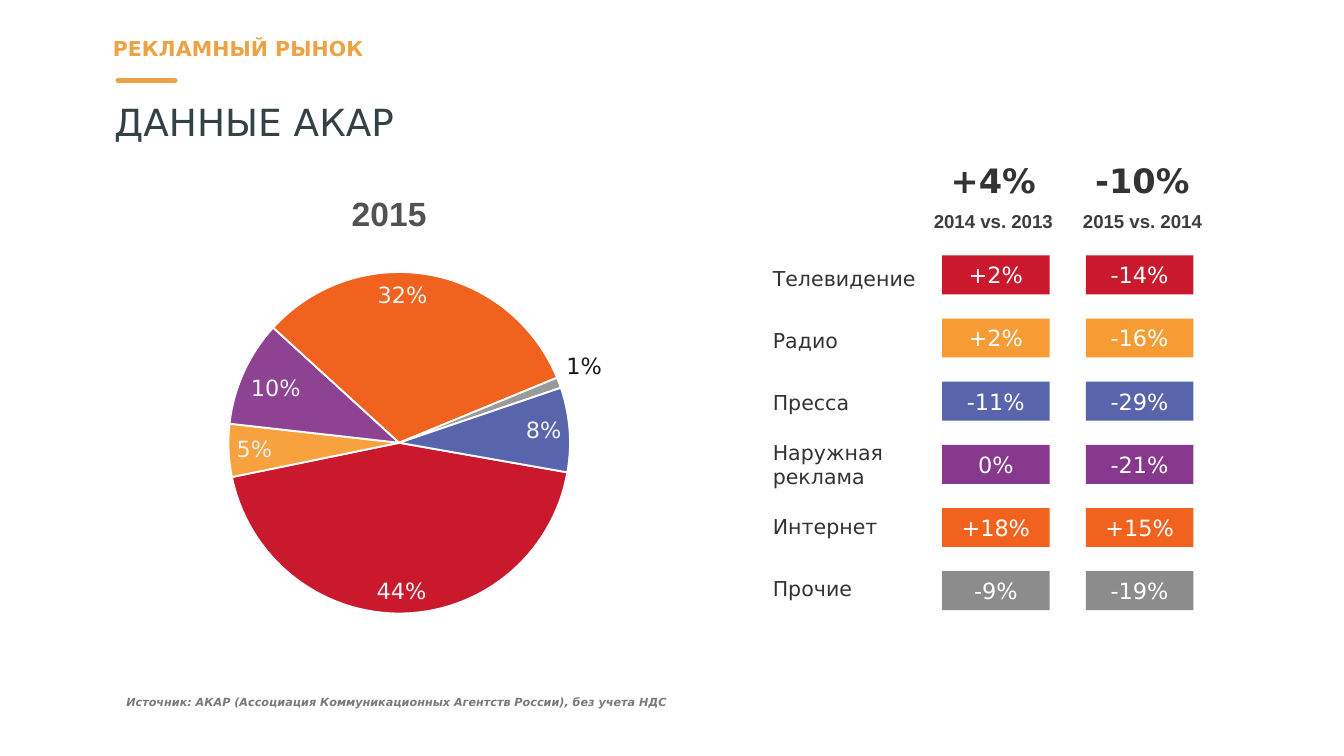
from typing import NamedTuple

from lxml import etree
from pptx import Presentation
from pptx.chart.data import CategoryChartData
from pptx.dml.color import RGBColor
from pptx.enum.chart import XL_CHART_TYPE, XL_LABEL_POSITION
from pptx.enum.shapes import MSO_CONNECTOR, MSO_SHAPE
from pptx.enum.text import MSO_ANCHOR, MSO_AUTO_SIZE, PP_ALIGN
from pptx.oxml.ns import qn
from pptx.util import Inches, Pt

LEFT, CENTER = PP_ALIGN.LEFT, PP_ALIGN.CENTER
TOP, MIDDLE, BOTTOM = MSO_ANCHOR.TOP, MSO_ANCHOR.MIDDLE, MSO_ANCHOR.BOTTOM
NO_FIT = MSO_AUTO_SIZE.NONE
IN_END, OUT_END = XL_LABEL_POSITION.INSIDE_END, XL_LABEL_POSITION.OUTSIDE_END
PIE, RECT, STRAIGHT = XL_CHART_TYPE.PIE, MSO_SHAPE.RECTANGLE, MSO_CONNECTOR.STRAIGHT

SANS, ARIAL = "DejaVu Sans", "Arial"
WHITE = RGBColor(0xFF, 0xFF, 0xFF)
PALE = RGBColor(0xF2, 0xF2, 0xF2)
GOLD = RGBColor(0xEC, 0xA2, 0x45)
SLATE = RGBColor(0x35, 0x42, 0x45)
BLACK = RGBColor(0x1A, 0x1A, 0x1A)
DARK = RGBColor(0x33, 0x33, 0x33)
COAL = RGBColor(0x3D, 0x3D, 0x3D)
IRON = RGBColor(0x52, 0x52, 0x52)
ASH = RGBColor(0x7A, 0x7A, 0x7A)
GRAY = RGBColor(0x80, 0x80, 0x80)
SILVER = RGBColor(0x99, 0x99, 0x99)
RED = RGBColor(0xC5, 0x00, 0x17)
AMBER = RGBColor(0xF7, 0x91, 0x1E)
BLUE = RGBColor(0x46, 0x55, 0xA5)
PURPLE = RGBColor(0x7A, 0x22, 0x80)
ORANGE = RGBColor(0xEF, 0x52, 0x05)

ROW_TOP, ROW_STEP = 1.9, 0.47
BADGE_X = (7.01, 8.08)


class Medium(NamedTuple):
    name: str
    color: RGBColor
    changes: tuple[str, str]


class Slice(NamedTuple):
    value: float
    color: RGBColor
    alpha: int


class Total(NamedTuple):
    left: float
    change: str
    years: str


MEDIA = [
    Medium("Телевидение", RED, ("+2%", "-14%")),
    Medium("Радио", AMBER, ("+2%", "-16%")),
    Medium("Пресса", BLUE, ("-11%", "-29%")),
    Medium("Наружная реклама", PURPLE, ("0%", "-21%")),
    Medium("Интернет", ORANGE, ("+18%", "+15%")),
    Medium("Прочие", GRAY, ("-9%", "-19%")),
]
SLICES = [
    Slice(0.44, RED, 90),
    Slice(0.05, AMBER, 85),
    Slice(0.1, PURPLE, 85),
    Slice(0.32, ORANGE, 90),
    Slice(0.01, SILVER, 100),
    Slice(0.08, BLUE, 90),
]
OTHER = 4
TOTALS = [
    Total(6.75, "+4%", "2014 vs. 2013"),
    Total(7.86, "-10%", "2015 vs. 2014"),
]


def style(font, size: float, color: RGBColor, face=SANS, bold=False, italic=False):
    font.name, font.size = face, Pt(size)
    font.bold, font.italic = bold, italic
    font.color.rgb = color


def setup(frame, side: float, edge: float, anchor=TOP, wrap=True):
    """Set the margins, anchor and wrapping of a text frame."""
    frame.margin_left = frame.margin_right = Inches(side)
    frame.margin_top = frame.margin_bottom = Inches(edge)
    frame.vertical_anchor = anchor
    frame.auto_size = NO_FIT
    frame.word_wrap = wrap


def place(shape, left: float, top: float, width: float, height: float):
    shape.left, shape.top = Inches(left), Inches(top)
    shape.width, shape.height = Inches(width), Inches(height)


def add_box(slide, left: float, top: float, width: float, height: float):
    return slide.shapes.add_textbox(
        Inches(left), Inches(top), Inches(width), Inches(height)
    ).text_frame


def write(para, text: str, align=LEFT, **look):
    para.text, para.alignment = text, align
    style(para.font, **look)


def fade(props, alpha: int):
    """Set the opacity, in percent, of the solid fill in shape properties."""
    color = props.find(qn("a:solidFill"))[0]
    etree.SubElement(color, qn("a:alpha"), val=str(alpha * 1000))


def add_heads(slide):
    rule = slide.shapes.add_connector(
        STRAIGHT, Inches(0.88), Inches(0.6), Inches(1.3), Inches(0.6)
    )
    rule.line.color.rgb, rule.line.width = GOLD, Pt(3)
    props = rule._element.spPr
    props.find(qn("a:ln")).set("cap", "rnd")
    etree.SubElement(props, qn("a:effectLst"))

    topic = add_box(slide, 0.78, 0.24, 1.98, 0.24)
    setup(topic, 0.06, 0.03, wrap=False)
    write(topic.paragraphs[0], "РЕКЛАМНЫЙ РЫНОК", size=11, color=GOLD, bold=True)

    title = slide.shapes.title
    place(title, 0.79, 0.71, 7.23, 0.44)
    setup(title.text_frame, 0.06, 0.03)
    write(title.text_frame.paragraphs[0], "ДАННЫЕ АКАР", size=20, color=SLATE)

    source = add_box(slide, 0.88, 4.82, 7.76, 0.48)
    setup(source, 0.06, 0.03, BOTTOM)
    write(
        source.paragraphs[0],
        "Источник: АКАР (Ассоциация Коммуникационных Агентств России), без учета НДС",
        size=6, color=ASH, bold=True, italic=True,
    )


def add_pie(slide):
    data = CategoryChartData(number_format="0%")
    data.categories = [str(i + 1) for i in range(len(SLICES))]
    data.add_series("Series 1", [part.value for part in SLICES])
    chart = slide.shapes.add_chart(
        PIE, Inches(0.88), Inches(1.8), Inches(4.1), Inches(2.99), data
    ).chart
    chart.has_title = chart.has_legend = False
    style(chart.font, 18, DARK)
    plot = chart.plots[0]
    plot.vary_by_categories = True
    series = plot.series[0]

    labels = series.data_labels
    labels.show_value = False
    labels.show_percentage = True
    labels.number_format, labels.number_format_is_linked = "0%", False
    labels.position = IN_END
    style(labels.font, 12, PALE)
    other = series.points[OTHER].data_label
    style(other.font, 12, BLACK)
    other.position = OUT_END

    for i, part in enumerate(SLICES):
        look = series.points[i].format
        look.fill.solid()
        look.fill.fore_color.rgb = part.color
        look.line.color.rgb, look.line.width = WHITE, Pt(1)
    for props, part in zip(series._element.xpath("c:dPt/c:spPr"), SLICES):
        fade(props, part.alpha)

    pie = chart._chartSpace.xpath("//c:pieChart")[0]
    for old in pie.findall(qn("c:firstSliceAng")):
        pie.remove(old)
    etree.SubElement(pie, qn("c:firstSliceAng"), val="100")
    area = pie.getparent()
    for old in area.findall(qn("c:layout")):
        area.remove(old)
    layout = etree.Element(qn("c:layout"))
    manual = etree.SubElement(layout, qn("c:manualLayout"))
    for key, value in (
        ("layoutTarget", "inner"), ("xMode", "edge"), ("yMode", "edge"),
        ("x", "0.2"), ("y", "0.07"), ("w", "0.62"), ("h", "0.86"),
    ):
        etree.SubElement(manual, qn(f"c:{key}"), val=value)
    area.insert(0, layout)

    year = add_box(slide, 1.54, 1.39, 2.71, 0.4)
    setup(year, 0.1, 0.05)
    write(year.paragraphs[0], "2015", CENTER, size=18, color=IRON, face=ARIAL, bold=True)


def add_names(slide):
    table = slide.shapes.add_table(
        len(MEDIA), 1, Inches(5.74), Inches(1.84), Inches(1.27), Inches(2.77)
    ).table
    table.first_row = table.horz_banding = False
    for cell, medium in zip(table.iter_cells(), MEDIA):
        cell.fill.background()
        cell.vertical_anchor = MIDDLE
        cell.margin_left = cell.margin_right = cell.margin_top = Inches(0.01)
        cell.margin_bottom = 0
        write(cell.text_frame.paragraphs[0], medium.name, size=11, color=DARK)


def add_badge(slide, left: float, top: float, text: str, color: RGBColor):
    badge = slide.shapes.add_shape(
        RECT, Inches(left), Inches(top), Inches(0.8), Inches(0.29)
    )
    badge.shadow.inherit = False
    badge.fill.solid()
    badge.fill.fore_color.rgb = color
    fade(badge._element.spPr, 90)
    badge.line.fill.background()
    setup(badge.text_frame, 0.09, 0.04, MIDDLE)
    write(badge.text_frame.paragraphs[0], text, CENTER, size=12, color=WHITE)


def add_total(slide, total: Total):
    frame = add_box(slide, total.left, 1.14, 1.28, 0.64)
    setup(frame, 0.1, 0.05)
    head = frame.paragraphs[0]
    write(head, total.change, CENTER, size=18, color=DARK, bold=True)
    head.space_after = Pt(5.4)
    write(
        frame.add_paragraph(), total.years, CENTER,
        size=10, color=COAL, face=ARIAL, bold=True,
    )


def main():
    deck = Presentation()
    deck.slide_width = Inches(10)
    deck.slide_height = deck.slide_width * 9 // 16
    slide = deck.slides.add_slide(deck.slide_layouts[5])
    add_heads(slide)
    add_pie(slide)
    add_names(slide)
    for row, medium in enumerate(MEDIA):
        for left, change in zip(BADGE_X, medium.changes):
            add_badge(slide, left, ROW_TOP + row * ROW_STEP, change, medium.color)
    for total in TOTALS:
        add_total(slide, total)
    deck.save("out.pptx")


if __name__ == "__main__":
    main()
